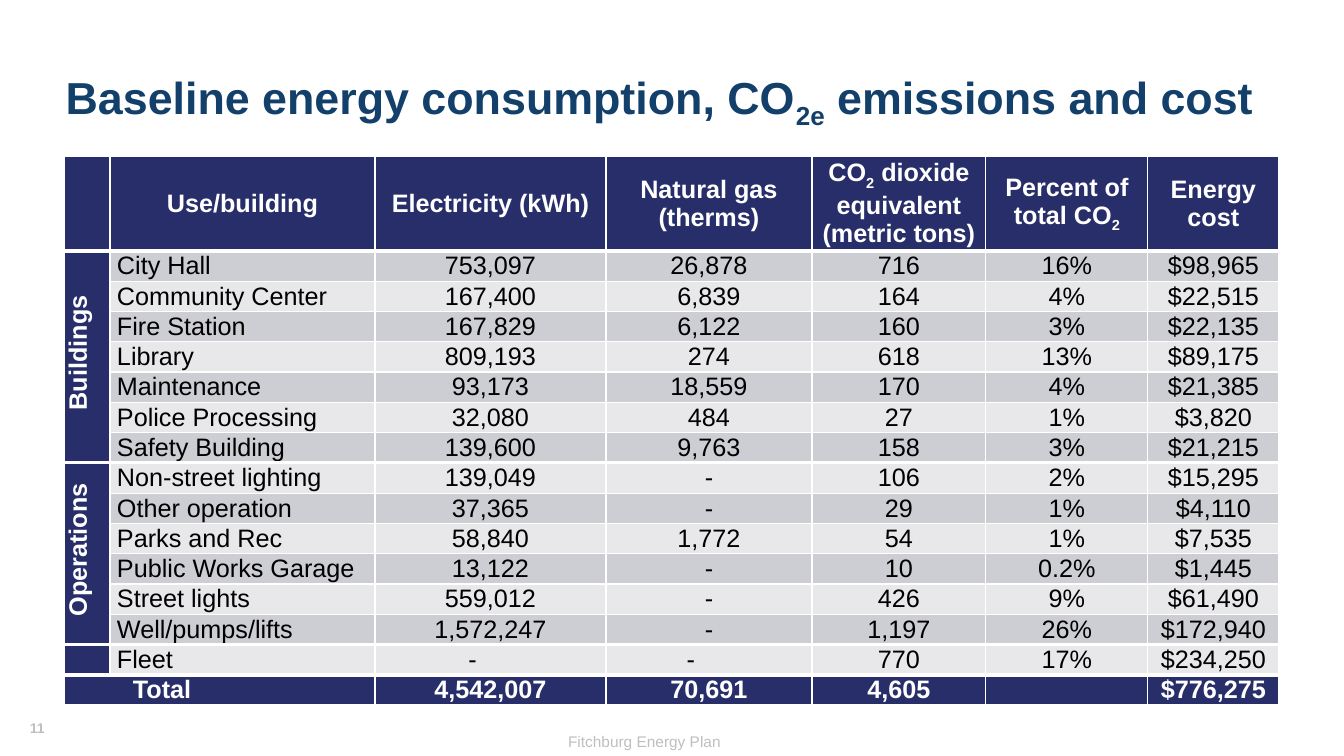
from dataclasses import dataclass

from lxml.etree import SubElement
from pptx import Presentation
from pptx.dml.color import RGBColor as RGB
from pptx.enum.text import MSO_ANCHOR as Anchor, PP_ALIGN as Align
from pptx.oxml.ns import qn
from pptx.util import Emu, Pt

EMU_PER_PX = 914400 / 100.8


@dataclass(frozen=True)
class Theme:
    font: str = "Arial"
    title: str = "13406A"
    navy: str = "272E69"
    band_dark: str = "CDCDD4"
    band_light: str = "E8E8EB"
    white: str = "FFFFFF"
    black: str = "000000"
    grey: str = "BFBFBF"
    title_size: int = 32
    table_size: int = 18
    footer_size: int = 11
    number_size: int = 10


THEME = Theme()

# Text between underscores is set as subscript
HEADERS = ("", "Use/building", "Electricity (kWh)", "Natural gas (therms)",
           "CO_2_ dioxide equivalent (metric tons)",
           "Percent of total CO_2_", "Energy cost")
USES = [
    ("City Hall", "753,097", "26,878", "716", "16%", "$98,965"),
    ("Community Center", "167,400", "6,839", "164", "4%", "$22,515"),
    ("Fire Station", "167,829", "6,122", "160", "3%", "$22,135"),
    ("Library", "809,193", "274", "618", "13%", "$89,175"),
    ("Maintenance", "93,173", "18,559", "170", "4%", "$21,385"),
    ("Police Processing", "32,080", "484", "27", "1%", "$3,820"),
    ("Safety Building", "139,600", "9,763", "158", "3%", "$21,215"),
    ("Non-street lighting", "139,049", "-", "106", "2%", "$15,295"),
    ("Other operation", "37,365", "-", "29", "1%", "$4,110"),
    ("Parks and Rec", "58,840", "1,772", "54", "1%", "$7,535"),
    ("Public Works Garage", "13,122", "-", "10", "0.2%", "$1,445"),
    ("Street lights", "559,012", "-", "426", "9%", "$61,490"),
    ("Well/pumps/lifts", "1,572,247", "-", "1,197", "26%", "$172,940"),
    ("Fleet", "-", "-", "770", "17%", "$234,250"),
]
TOTALS = ("Total", "", "4,542,007", "70,691", "4,605", "", "$776,275")
GROUPS = {"Buildings": (1, 7), "Operations": (8, 13)}  # first and last row
FLEET_ROW = len(USES)
TOTAL_ROW = FLEET_ROW + 1

COLUMN_WIDTHS = (46, 265, 231, 206, 174, 162, 131)
HEADER_HEIGHT, ROW_HEIGHT = 88, 28
CELL_INSET, TOTAL_INSET, FLEET_DASH_INSET = 7, 69, 43
THIN_RULE = 1
HEAVY_RULES = {1: 3, 8: 2.25, FLEET_ROW: 2.25, TOTAL_ROW: 3}  # above row


def px(length):
    return Emu(round(length * EMU_PER_PX))


def write(paragraph, text, size, color, bold=False, align=Align.CENTER):
    paragraph.alignment = align
    for index, part in enumerate(text.split("_")):
        if not part:
            continue
        run = paragraph.add_run()
        run.text = part
        run.font.name = THEME.font
        run.font.size = Pt(size)
        run.font.bold = bold
        run.font.color.rgb = RGB.from_string(color)
        if index % 2:
            run._r.get_or_add_rPr().set("baseline", "-25000")


def add_label(slide, box, text, size, color, bold=False,
              align=Align.CENTER, anchor=Anchor.TOP, wrap=True):
    frame = slide.shapes.add_textbox(*map(px, box)).text_frame
    frame.word_wrap = wrap
    frame.vertical_anchor = anchor
    write(frame.paragraphs[0], text, size, color, bold, align)
    return frame


def rule_cell(cell, row):
    """Draw white rules; called before the fill, which must follow them."""
    widths = {"lnL": THIN_RULE, "lnR": THIN_RULE,
              "lnT": HEAVY_RULES.get(row, THIN_RULE),
              "lnB": HEAVY_RULES.get(row + 1, THIN_RULE)}
    properties = cell._tc.get_or_add_tcPr()
    for side, width in widths.items():
        line = SubElement(properties, qn(f"a:{side}"), w=str(Pt(width)))
        fill = SubElement(line, qn("a:solidFill"))
        SubElement(fill, qn("a:srgbClr"), val=THEME.white)


def fill_cell(cell, row, column, text):
    strong = column == 0 or row in (0, TOTAL_ROW)
    band = THEME.band_dark if row % 2 else THEME.band_light
    rule_cell(cell, row)
    cell.fill.solid()
    cell.fill.fore_color.rgb = RGB.from_string(THEME.navy if strong else band)
    cell.vertical_anchor = Anchor.MIDDLE
    cell.margin_left = cell.margin_right = px(CELL_INSET)
    cell.margin_top = cell.margin_bottom = 0
    left = row > 0 and column < 2 and text not in GROUPS
    write(cell.text_frame.paragraphs[0], text, THEME.table_size,
          THEME.white if strong else THEME.black, strong,
          Align.LEFT if left else Align.CENTER)


def add_energy_table(slide, left, top):
    group_names = {first: name for name, (first, _) in GROUPS.items()}
    body = [(group_names.get(row, ""), *use) for row, use in enumerate(USES, 1)]
    rows = [HEADERS, *body, TOTALS]
    heights = [HEADER_HEIGHT] + [ROW_HEIGHT] * (len(rows) - 1)
    table = slide.shapes.add_table(
        len(rows), len(HEADERS), px(left), px(top),
        px(sum(COLUMN_WIDTHS)), px(sum(heights))).table
    for column, width in zip(table.columns, COLUMN_WIDTHS):
        column.width = px(width)
    for row, height in zip(table.rows, heights):
        row.height = px(height)
    for row, texts in enumerate(rows):
        for column, text in enumerate(texts):
            fill_cell(table.cell(row, column), row, column, text)

    # Rotated group names
    for first, last in GROUPS.values():
        group = table.cell(first, 0)
        group.merge(table.cell(last, 0))
        group._tc.get_or_add_tcPr().set("vert", "vert270")
        group.text_frame.paragraphs[0]._p.get_or_add_pPr().set(
            "marL", str(px(8)))

    # Total label and the dashes set left of centre
    total = table.cell(TOTAL_ROW, 0)
    total.merge(table.cell(TOTAL_ROW, 1))
    total.margin_left = px(TOTAL_INSET)
    for column in (2, 3):
        table.cell(FLEET_ROW, column).margin_right = px(FLEET_DASH_INSET)


def main():
    deck = Presentation()
    deck.slide_width, deck.slide_height = px(1344), px(756)
    slide = deck.slides.add_slide(deck.slide_layouts[6])

    # Footer
    add_label(slide, (438, 727, 413, 29), "Fitchburg Energy Plan",
              THEME.footer_size, THEME.grey)
    add_label(slide, (20, 715, 37, 27), "11", THEME.number_size, THEME.grey,
              bold=True, align=Align.LEFT, wrap=False)

    # Title
    title = add_label(slide, (44, 25, 1231, 146),
                      "Baseline energy consumption, CO_2e_ emissions and cost",
                      THEME.title_size, THEME.title, bold=True,
                      anchor=Anchor.MIDDLE)
    title.paragraphs[0].line_spacing = 0.9

    # Table
    add_energy_table(slide, 64, 156)

    deck.save("out.pptx")


if __name__ == "__main__":
    main()
